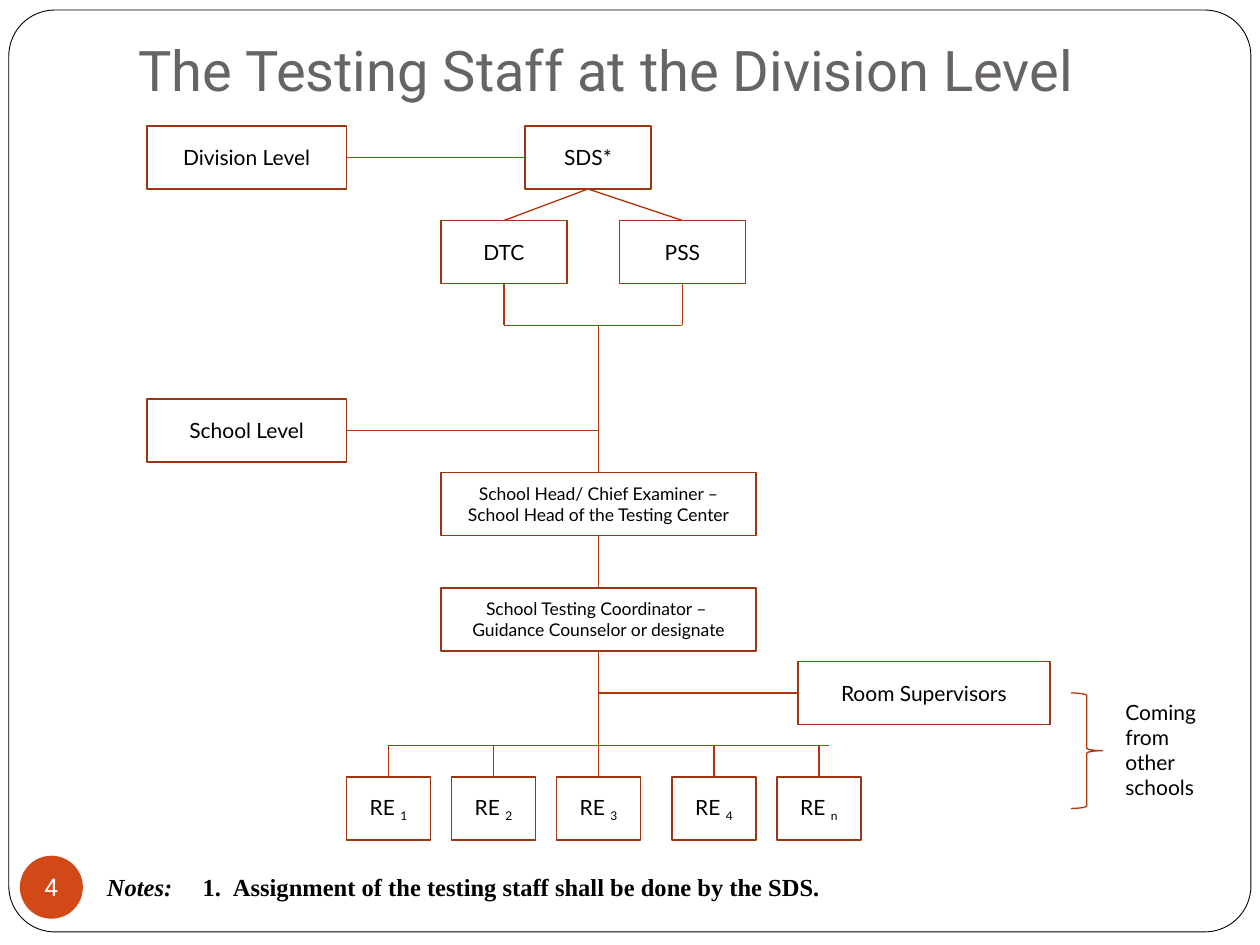
import dataclasses

import lxml.etree
import pptx
import pptx.dml.color
import pptx.enum.shapes
import pptx.enum.text
import pptx.oxml.ns
import pptx.util

COLORS = {
    "white": "FFFFFF",
    "black": "000000",
    "title": "696464",
    "badge": "D34817",
    "border": "9C3511",
    "link": "B1360B",
}
UNIT = pptx.util.Inches(1) / 12
COLUMNS, ROWS = 120, 90
ROW_HEIGHT = 6
TOP, LEFT, BOTTOM, RIGHT = range(4)
SHAPES = pptx.enum.shapes.MSO_SHAPE
ANCHOR = pptx.enum.text.MSO_ANCHOR
ALIGN = pptx.enum.text.PP_ALIGN


@dataclasses.dataclass
class Box:
    left: float
    top: float
    width: float
    height: float

    def inner(self, column, row, width, height=ROW_HEIGHT):
        return Box(self.left + column, self.top + row, width, height)

    def point(self, column, row):
        return self.left + column, self.top + row

    def lengths(self):
        return [round(value * UNIT) for value in (self.left, self.top, self.width, self.height)]


def rgb(name):
    return pptx.dml.color.RGBColor.from_string(COLORS[name])


def write(shape, paragraphs, font="Lato", size=12, color="black", bold=False,
          align=ALIGN.CENTER, anchor=ANCHOR.MIDDLE, wrap=True):
    frame = shape.text_frame
    frame.word_wrap = wrap
    frame.auto_size = pptx.enum.text.MSO_AUTO_SIZE.NONE
    frame.vertical_anchor = anchor
    for index, pieces in enumerate(paragraphs):
        paragraph = frame.add_paragraph() if index else frame.paragraphs[0]
        paragraph.alignment = align
        for text, style in pieces:
            run = paragraph.add_run()
            run.text = text
            run.font.name = font
            run.font.size = pptx.util.Pt(size)
            run.font.bold = bold
            run.font.italic = style == "italic"
            run.font.color.rgb = rgb(color)
            if style == "subscript":
                run.font._element.set("baseline", "-25000")
    return frame


def draw(slide, kind, box, fill=None, line=None, weight=1):
    shape = slide.shapes.add_shape(kind, *box.lengths())
    shape.shadow.inherit = False
    if fill:
        shape.fill.solid()
        shape.fill.fore_color.rgb = rgb(fill)
    else:
        shape.fill.background()
    if line:
        shape.line.color.rgb = rgb(line)
        shape.line.width = pptx.util.Pt(weight)
    else:
        shape.line.fill.background()
    return shape


def add_role(slide, box, *lines, subscript=None, size=12):
    shape = draw(slide, SHAPES.RECTANGLE, box, line="border")
    paragraphs = [[(line, None)] for line in lines]
    if subscript:
        paragraphs[-1].append((subscript, "subscript"))
    write(shape, paragraphs, size=size)
    return shape


def link(slide, start, end):
    points = []
    for place, side in (start, end):
        points += [0, 0] if hasattr(place, "shape_id") else [round(place * UNIT), round(side * UNIT)]
    connector = slide.shapes.add_connector(pptx.enum.shapes.MSO_CONNECTOR.STRAIGHT, *points)
    if hasattr(start[0], "shape_id"):
        connector.begin_connect(*start)
    if hasattr(end[0], "shape_id"):
        connector.end_connect(*end)
    connector.line.color.rgb = rgb("link")
    connector.line.width = pptx.util.Pt(0.75)
    properties = connector.element.find(pptx.oxml.ns.qn("p:spPr"))
    lxml.etree.SubElement(properties, pptx.oxml.ns.qn("a:effectLst"))


def add_frame(slide, box):
    frame = draw(slide, SHAPES.ROUNDED_RECTANGLE, box, fill="white", line="black", weight=0.5)
    frame.adjustments[0] = 0.05
    slide.shapes.element.insert(2, frame.element)


def add_title(slide, box):
    title = slide.shapes.title
    title.left, title.top, title.width, title.height = box.lengths()
    frame = write(title, [[("The Testing Staff at the Division Level", None)]], font="Roboto",
                  size=32, color="title", align=ALIGN.LEFT, anchor=ANCHOR.BOTTOM)
    frame.margin_bottom = pptx.util.Inches(0.1)


def add_division_level(slide, box):
    level = add_role(slide, box.inner(0, 0, 19), "Division Level")
    superintendent = add_role(slide, box.inner(36, 0, 12), "SDS*")
    link(slide, (level, RIGHT), (superintendent, LEFT))
    for name, column in (("DTC", 28), ("PSS", 45)):
        role = add_role(slide, box.inner(column, 9, 12), name)
        link(slide, (superintendent, BOTTOM), (role, TOP))
        link(slide, (role, BOTTOM), box.point(column + 6, 19))
    link(slide, box.point(34, 19), box.point(51, 19))
    return box.point(43, 19)


def add_school_level(slide, box, division_end):
    level = add_role(slide, box.inner(0, 0, 19), "School Level")
    head = add_role(slide, box.inner(28, 7, 30),
                    "School Head/ Chief Examiner – School Head of the Testing Center", size=10)
    coordinator = add_role(slide, box.inner(28, 18, 30), "School Testing Coordinator – ",
                           "Guidance Counselor or designate", size=10)
    link(slide, (head, TOP), division_end)
    link(slide, (level, RIGHT), box.point(43, 3))
    link(slide, (head, BOTTOM), (coordinator, TOP))
    return coordinator


def add_examiners(slide, box, coordinator):
    supervisors = add_role(slide, box.inner(43, 0, 24), "Room Supervisors")
    link(slide, (supervisors, LEFT), box.point(24, 3))
    link(slide, (coordinator, BOTTOM), box.point(24, 8))
    link(slide, box.point(4, 8), box.point(46, 8))
    for mark, column in zip("1234n", (0, 10, 20, 31, 41)):
        examiner = add_role(slide, box.inner(column, 11, 8), "RE ", subscript=mark)
        link(slide, box.point(column + 4, 8), (examiner, TOP))


def add_origin(slide, box):
    draw(slide, SHAPES.RIGHT_BRACE, box.inner(0, 0, 3, box.height), line="link", weight=0.75)
    label = slide.shapes.add_textbox(*box.inner(4, 0, 10, box.height).lengths())
    write(label, [[("Coming from other schools", None)]], align=ALIGN.LEFT, anchor=ANCHOR.TOP)


def add_footer(slide, box):
    badge = draw(slide, SHAPES.OVAL, box.inner(0, 0, 6), fill="badge")
    frame = write(badge, [[("4", None)]], font="Roboto", size=14, color="white", wrap=False)
    frame.margin_left = frame.margin_right = frame.margin_top = frame.margin_bottom = 0
    notes = slide.shapes.add_textbox(*box.inner(7.1, 1, 88, 7).lengths())
    pieces = [("Notes:\t", "italic"), ("1.\tAssignment of the testing staff shall be done by the SDS.", None)]
    write(notes, [pieces], font="Times New Roman", size=14, bold=True,
          align=ALIGN.LEFT, anchor=ANCHOR.TOP)
    properties = next(notes.element.iter(pptx.oxml.ns.qn("a:pPr")))
    stops = lxml.etree.SubElement(properties, pptx.oxml.ns.qn("a:tabLst"))
    for inches in (0.76, 1):
        stop = lxml.etree.SubElement(stops, pptx.oxml.ns.qn("a:tab"))
        stop.set("pos", str(int(pptx.util.Inches(inches))))
        stop.set("algn", "l")


def main():
    presentation = pptx.Presentation()
    presentation.slide_width = round(COLUMNS * UNIT)
    presentation.slide_height = round(ROWS * UNIT)
    slide = presentation.slides.add_slide(presentation.slide_layouts[5])
    add_frame(slide, Box(0.84, 0.96, 118.3, 87.8))
    add_title(slide, Box(12, 1, 94, 10))
    division_end = add_division_level(slide, Box(14, 12, 57, 19))
    coordinator = add_school_level(slide, Box(14, 38, 58, 24), division_end)
    add_examiners(slide, Box(33, 63, 67, 17), coordinator)
    add_origin(slide, Box(102, 66, 14, 11))
    add_footer(slide, Box(1.9, 81.5, 95, 8))
    presentation.save("out.pptx")


if __name__ == "__main__":
    main()
